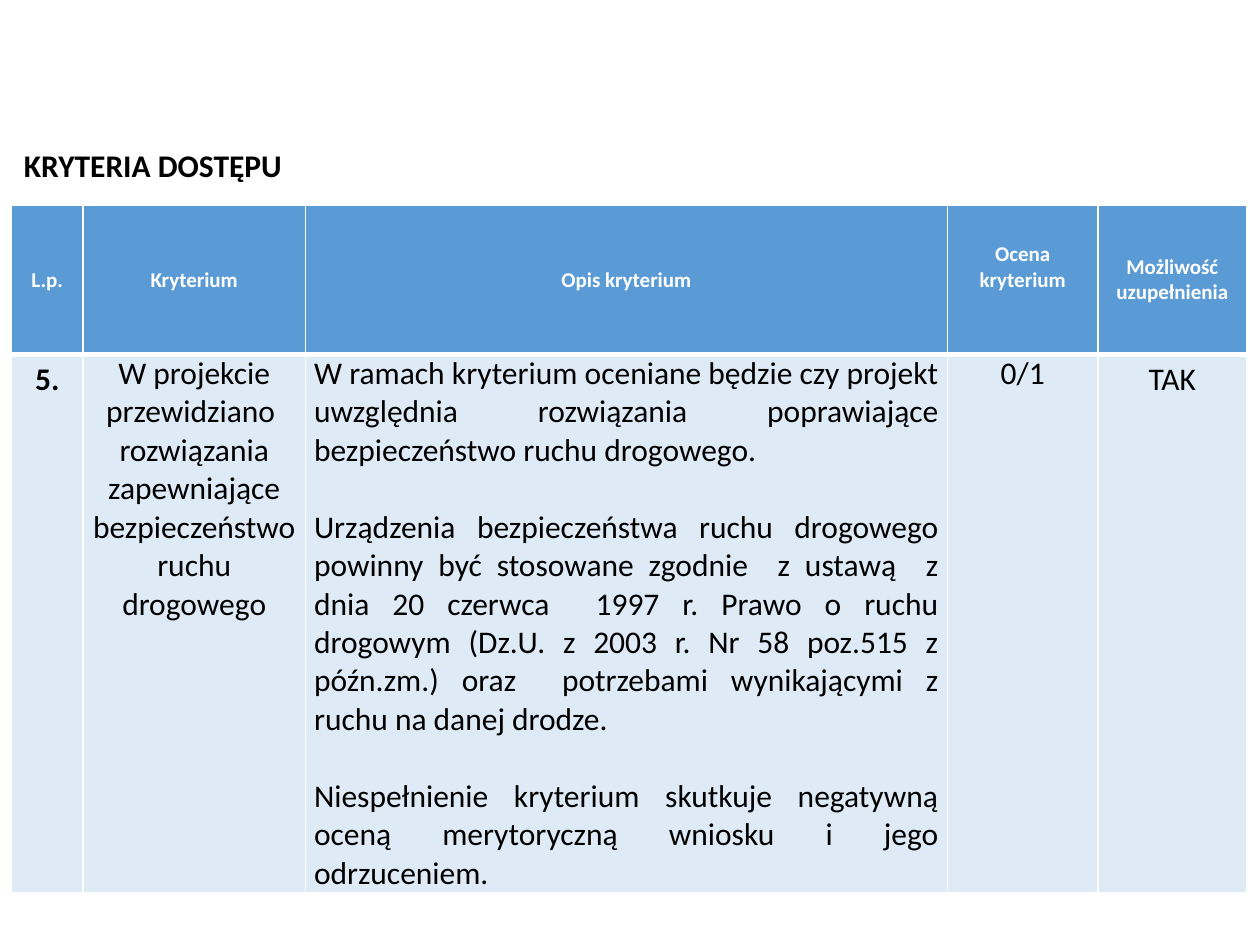
from lxml.etree import SubElement
from pptx import Presentation
from pptx.dml.color import RGBColor
from pptx.enum.text import MSO_ANCHOR, MSO_AUTO_SIZE, PP_ALIGN
from pptx.oxml.ns import qn
from pptx.util import Pt

TITLE = "KRYTERIA DOSTĘPU"
HEADERS = ["L.p.", "Kryterium", "Opis kryterium", "Ocena kryterium", "Możliwość uzupełnienia"]
CRITERION = [
    ["5."],
    ["W projekcie przewidziano  rozwiązania zapewniające bezpieczeństwo ruchu drogowego"],
    [
        "W ramach kryterium oceniane będzie czy projekt uwzględnia rozwiązania poprawiające "
        "bezpieczeństwo ruchu drogowego.",
        "Urządzenia bezpieczeństwa ruchu drogowego powinny być stosowane zgodnie  z ustawą  z dnia "
        "20 czerwca  1997 r. Prawo o ruchu drogowym (Dz.U. z 2003 r. Nr 58 poz.515 z późn.zm.) oraz  "
        "potrzebami wynikającymi z ruchu na danej drodze.",
        "Niespełnienie kryterium skutkuje negatywną oceną merytoryczną wniosku i jego odrzuceniem.",
    ],
    ["0/1"],
    ["TAK"],
]
NUMBER, DESCRIPTION, SCORE, COMPLETION = 0, 2, 3, 4
COLUMN_WIDTHS = [41, 127, 367, 86, 85]
ROW_HEIGHTS = [85, 305]
LEFT, TITLE_TOP, TABLE_TOP = 6.5, 80, 117.5
COLORS = {"header": "5B9BD5", "body": "DEEBF7", "white": "FFFFFF", "black": "000000"}
FONT = "Calibri"


def color(name):
    """Return the named colour."""
    return RGBColor.from_string(COLORS[name])


def format_paragraph(paragraph, size, color_name, bold, alignment):
    """Apply font and alignment to a paragraph and its runs."""
    paragraph.alignment = alignment
    for run in paragraph.runs:
        run.font.name = FONT
        run.font.size = Pt(size)
        run.font.bold = bold
        run.font.color.rgb = color(color_name)


def style_cell(cell, fill_name, bottom_width):
    """Draw white borders around a cell and fill it."""
    properties = cell._tc.get_or_add_tcPr()
    for side, width in (("L", 1), ("R", 1), ("T", 1), ("B", bottom_width)):
        line = SubElement(properties, qn(f"a:ln{side}"), w=str(Pt(width)))
        SubElement(SubElement(line, qn("a:solidFill")), qn("a:srgbClr"), val=COLORS["white"])
    cell.fill.solid()
    cell.fill.fore_color.rgb = color(fill_name)


def add_title(slide):
    """Place the slide heading above the table."""
    title = slide.shapes.title
    title.left, title.top, title.width, title.height = Pt(LEFT), Pt(TITLE_TOP), Pt(163.5), Pt(29)
    frame = title.text_frame
    frame.text = TITLE
    frame.word_wrap = False
    frame.auto_size = MSO_AUTO_SIZE.NONE
    frame.vertical_anchor = MSO_ANCHOR.MIDDLE
    format_paragraph(frame.paragraphs[0], 18, "black", True, PP_ALIGN.LEFT)


def fill_header(table):
    """Write the header row."""
    for column, text in enumerate(HEADERS):
        cell = table.cell(0, column)
        cell.text_frame.text = text
        cell.vertical_anchor = MSO_ANCHOR.MIDDLE
        if column == SCORE:
            cell.margin_bottom = Pt(18)
        style_cell(cell, "header", 3)
        format_paragraph(cell.text_frame.paragraphs[0], 12, "white", True, PP_ALIGN.CENTER)


def fill_criterion(table):
    """Write the criterion row."""
    for column, texts in enumerate(CRITERION):
        cell = table.cell(1, column)
        cell.margin_left = cell.margin_right = Pt(5)
        cell.margin_top = cell.margin_bottom = 0
        cell.vertical_anchor = MSO_ANCHOR.TOP
        style_cell(cell, "body", 1)
        cell.text_frame.text = "\n".join(texts)
        alignment = PP_ALIGN.JUSTIFY if column == DESCRIPTION else PP_ALIGN.CENTER
        for index, paragraph in enumerate(cell.text_frame.paragraphs):
            format_paragraph(paragraph, 18, "black", column == NUMBER, alignment)
            if index:
                paragraph.space_before = Pt(22)
            if column in (NUMBER, COMPLETION):
                paragraph.line_spacing = 1.15


def main():
    """Build the slide and save it."""
    presentation = Presentation()
    presentation.slide_width, presentation.slide_height = Pt(720), Pt(540)
    slide = presentation.slides.add_slide(presentation.slide_layouts[5])
    add_title(slide)
    table = slide.shapes.add_table(
        len(ROW_HEIGHTS), len(COLUMN_WIDTHS), Pt(LEFT), Pt(TABLE_TOP),
        Pt(sum(COLUMN_WIDTHS)), Pt(sum(ROW_HEIGHTS)),
    ).table
    for column, width in zip(table.columns, COLUMN_WIDTHS):
        column.width = Pt(width)
    for row, height in zip(table.rows, ROW_HEIGHTS):
        row.height = Pt(height)
    fill_header(table)
    fill_criterion(table)
    presentation.save("out.pptx")


if __name__ == "__main__":
    main()
